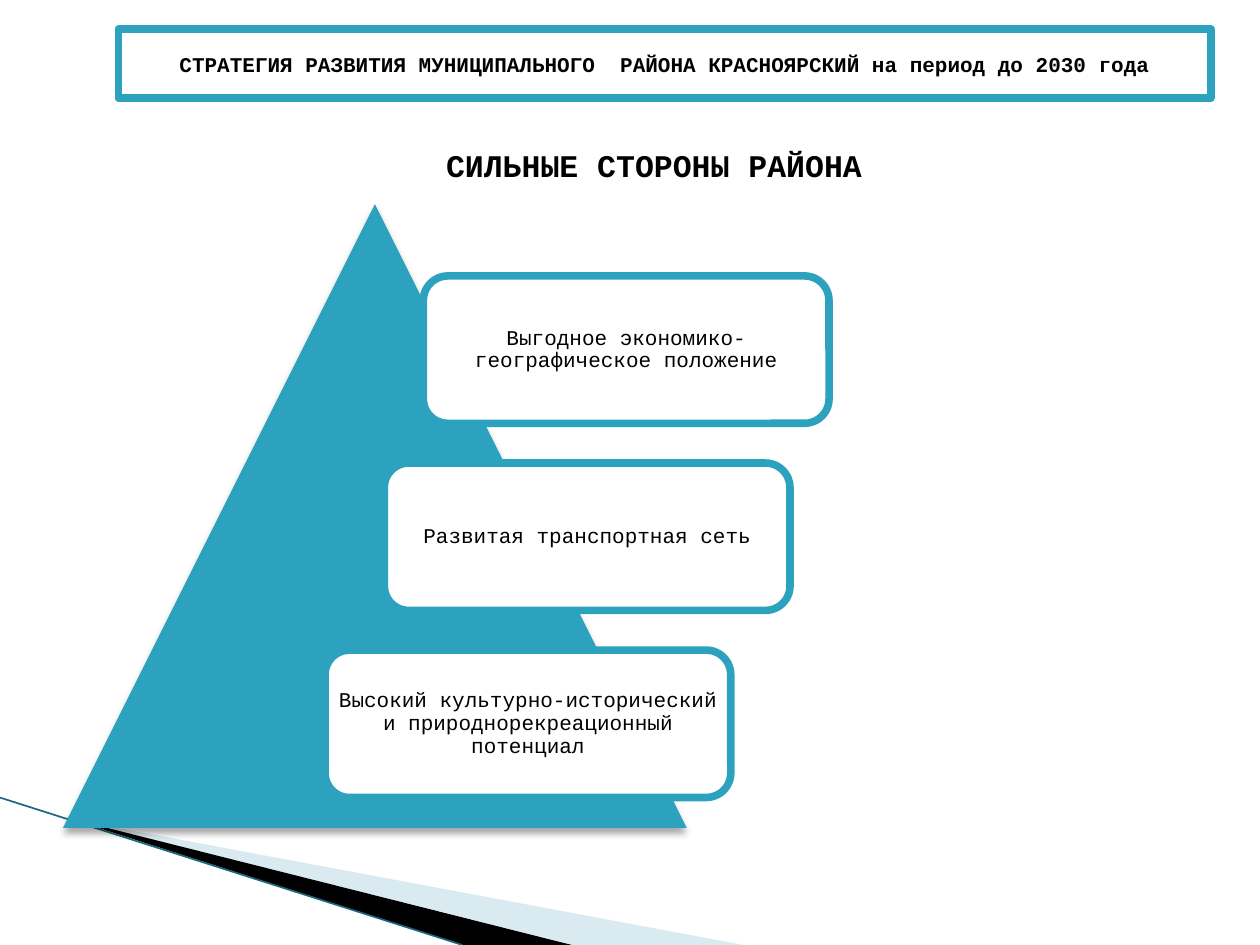
import pptx
import pptx.util
import pptx.dml.color
import pptx.enum.shapes
import pptx.enum.text
import pptx.oxml
import pptx.oxml.ns
from pptx.util import Inches

HEX = {"teal": "2DA2BF", "white": "FFFFFF", "black": "000000",
       "pale": "D9EAF1", "edge": "18697D"}
FONT = "Courier New"
BANNER = "СТРАТЕГИЯ РАЗВИТИЯ МУНИЦИПАЛЬНОГО  РАЙОНА КРАСНОЯРСКИЙ на период до 2030 года"
TITLE = "СИЛЬНЫЕ СТОРОНЫ РАЙОНА"
CARDS = [
    (3.36, "Выгодное экономико-географическое положение"),
    (3.05, "Развитая транспортная сеть"),
    (2.58, "Высокий культурно-исторический и природнорекреационный потенциал"),
]
TOP, STEP = 2.19, 1.485
WEDGES = [
    ("pale", [(0.55, 6.5), (5.9, 7.5), (4.56, 7.5)]),
    ("black", [(0.53, 6.49), (4.54, 7.5), (3.67, 7.5)]),
]
SHAPE = pptx.enum.shapes.MSO_SHAPE
NS = pptx.oxml.ns.nsdecls("a")
SHADE = (f'<a:effectLst {NS}><a:outerShdw blurRad="50800" dist="38100" dir="5400000" '
         'rotWithShape="0"><a:srgbClr val="000000"><a:alpha val="35000"/>'
         '</a:srgbClr></a:outerShdw></a:effectLst>')


def color(name):
    return pptx.dml.color.RGBColor.from_string(HEX[name])


def paint(shape, fill, line=None):
    shape.shadow.inherit = False
    shape.fill.solid()
    shape.fill.fore_color.rgb = color(fill)
    if line:
        shape.line.color.rgb = color(line)
        shape.line.width = pptx.util.Pt(4.33)
    else:
        shape.line.fill.background()


def write(shape, text, size=12, bold=False, gap=1.0):
    frame = shape.text_frame
    frame.word_wrap = True
    frame.auto_size = pptx.enum.text.MSO_AUTO_SIZE.NONE
    frame.vertical_anchor = pptx.enum.text.MSO_ANCHOR.MIDDLE
    para = frame.paragraphs[0]
    para.text = text
    para.alignment = pptx.enum.text.PP_ALIGN.CENTER
    para.line_spacing = gap
    para.font.name = FONT
    para.font.size = pptx.util.Pt(size)
    para.font.bold = bold
    para.font.color.rgb = color("black")


def place(shapes, kind, box, fill, line=None):
    shape = shapes.add_shape(kind, *map(Inches, box))
    paint(shape, fill, line)
    return shape


def main():
    deck = pptx.Presentation()
    deck.slide_width, deck.slide_height = Inches(10), Inches(7.5)
    slide = deck.slides.add_slide(deck.slide_layouts[5])
    shapes = slide.shapes

    for fill, points in WEDGES:
        start, *rest = [(Inches(x), Inches(y)) for x, y in points]
        pen = shapes.build_freeform(*start)
        pen.add_line_segments(rest, close=True)
        paint(pen.convert_to_shape(), fill)

    edge = shapes.add_connector(pptx.enum.shapes.MSO_CONNECTOR.STRAIGHT,
                                *map(Inches, (0, 6.33, 3.67, 7.5)))
    edge.line.color.rgb = color("edge")
    edge.line.width = pptx.util.Pt(0.95)
    edge._element.spPr.append(pptx.oxml.parse_xml(f"<a:effectLst {NS}/>"))

    peak = place(shapes, SHAPE.ISOSCELES_TRIANGLE, (0.5, 1.62, 4.95, 4.95), "teal")
    props = peak._element.spPr
    props.replace(props.find(pptx.oxml.ns.qn("a:effectLst")), pptx.oxml.parse_xml(SHADE))

    for row, (left, text) in enumerate(CARDS):
        card = place(shapes, SHAPE.ROUNDED_RECTANGLE,
                     (left, TOP + row * STEP, 3.22, 1.17), "white", "teal")
        frame = card.text_frame
        frame.margin_left = frame.margin_right = 0
        write(card, text, gap=0.9)

    banner = place(shapes, SHAPE.RECTANGLE, (0.94, 0.23, 8.67, 0.55), "white", "teal")
    write(banner, BANNER, bold=True)

    title = shapes.title
    title.left, title.top, title.width, title.height = map(Inches, (1.09, 1.11, 8.2, 0.4))
    write(title, TITLE, 18, True)

    deck.save("out.pptx")


if __name__ == "__main__":
    main()
